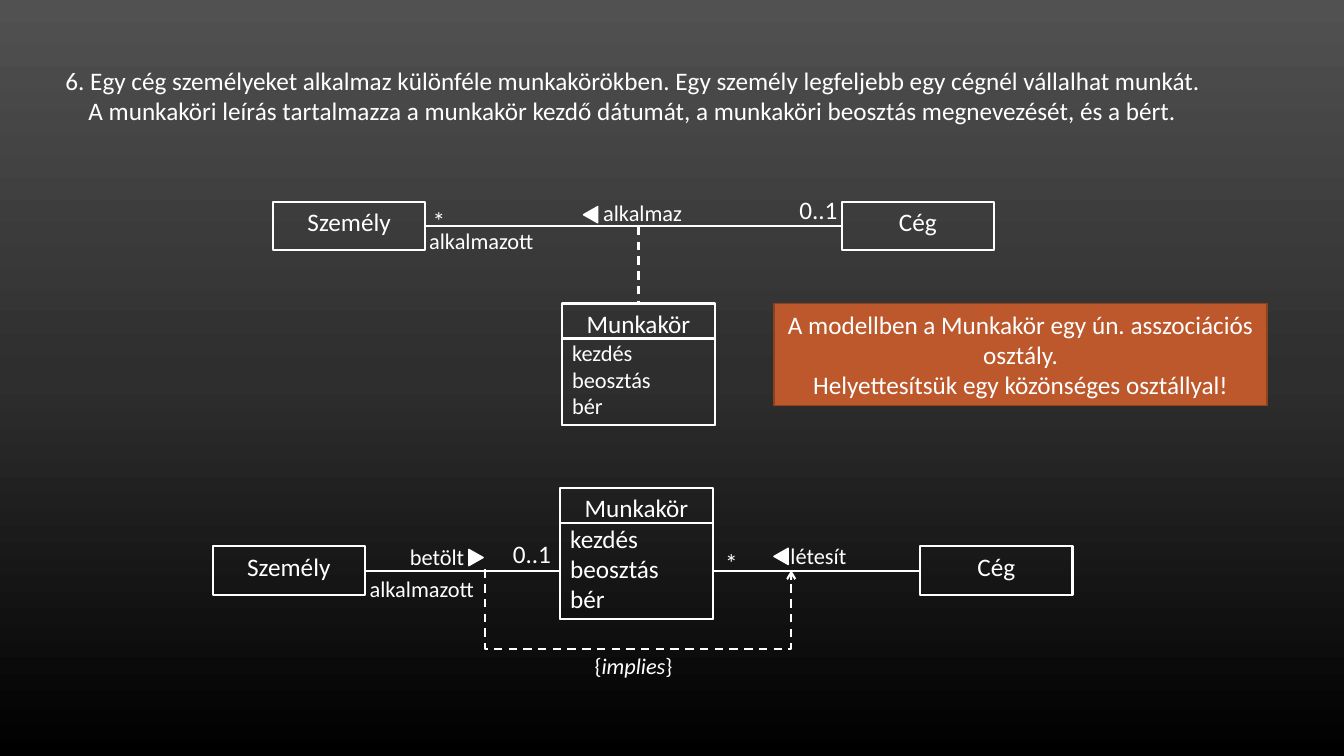
from copy import deepcopy

from lxml import etree
from pptx import Presentation
from pptx.dml.color import RGBColor
from pptx.enum.dml import MSO_LINE
from pptx.enum.shapes import MSO_CONNECTOR, MSO_SHAPE
from pptx.enum.text import MSO_ANCHOR, MSO_AUTO_SIZE, PP_ALIGN
from pptx.oxml.ns import qn
from pptx.util import Cm, Pt

STRAIGHT, ELBOW = MSO_CONNECTOR.STRAIGHT, MSO_CONNECTOR.ELBOW
RECT, WEDGE = MSO_SHAPE.RECTANGLE, MSO_SHAPE.ISOSCELES_TRIANGLE
DASH = MSO_LINE.DASH
LEFT, CENTER = PP_ALIGN.LEFT, PP_ALIGN.CENTER
TOP, MIDDLE = MSO_ANCHOR.TOP, MSO_ANCHOR.MIDDLE
GROW = MSO_AUTO_SIZE.SHAPE_TO_FIT_TEXT
TOP_SIDE, LEFT_SIDE, RIGHT_SIDE = 0, 1, 3

COLORS = {"white": "FFFFFF", "note": "BD582C", "edge": "8C4121",
          "high": "515151", "mid": "2E2E2E", "low": "000000"}
FONT = "Calibri"
WIDE, TALL, HEAD = 3.84, 1.22, 0.88  # class box and its name row, in cm


def color(name):
    return RGBColor.from_string(COLORS[name])


def write(shape, text, size=18, align=CENTER, italic=False, indent=0, join=False):
    """Add text as a new paragraph, or to the last one if join is set."""
    frame = shape.text_frame
    para = frame.paragraphs[-1]
    if para.runs and not join:
        para = frame.add_paragraph()
    para.alignment = align
    if indent:
        para._p.get_or_add_pPr().set("marL", str(Cm(indent)))
    run = para.add_run()
    run.text = text
    font = run.font
    font.name, font.size, font.italic = FONT, Pt(size), italic
    font.color.rgb = color("white")


class Diagram:
    def __init__(self, slide):
        self.slide = slide
        self.shapes = slide.shapes

    def backdrop(self, *names):
        fill = self.slide.background.fill
        fill.gradient()
        fill.gradient_angle = 270
        stops = self.slide.element.find(".//" + qn("a:gsLst"))
        stops.append(deepcopy(stops[-1]))
        for i, (stop, name) in enumerate(zip(fill.gradient_stops, names)):
            stop.color.rgb = color(name)
            stop.position = i / (len(names) - 1)

    def shape(self, kind, x, y, w, h, fill=None, line="white", width=1.5):
        item = self.shapes.add_shape(kind, Cm(x), Cm(y), Cm(w), Cm(h))
        item.shadow.inherit = False
        if fill:
            item.fill.solid()
            item.fill.fore_color.rgb = color(fill)
        else:
            item.fill.background()
        item.line.color.rgb = color(line)
        item.line.width = Pt(width)
        item.text_frame.vertical_anchor = TOP
        return item

    def entity(self, name, x, y):
        box = self.shape(RECT, x, y, WIDE, TALL)
        write(box, name)
        return box

    def job(self, x, y, h, size):
        """Draw the class with attributes; return its outline and lower part."""
        box = self.shape(RECT, x, y, WIDE, h)
        write(box, "Munkakör")
        for field in ("kezdés", "beosztás", "bér"):
            write(box, field, size=size, align=LEFT)
        return box, self.shape(RECT, x, y + HEAD, WIDE, h - HEAD)

    def label(self, text, x, y, w, h=0.94, **style):
        box = self.shapes.add_textbox(Cm(x), Cm(y), Cm(w), Cm(h))
        box.text_frame.word_wrap = False
        box.text_frame.auto_size = GROW
        write(box, text, **style)
        return box

    def wedge(self, x, y, turn):
        item = self.shape(WEDGE, x, y, 0.41, 0.36, fill="white", width=1)
        item.rotation = turn

    def line(self, x1, y1, x2, y2, kind=STRAIGHT, dash=None):
        item = self.shapes.add_connector(kind, Cm(x1), Cm(y1), Cm(x2), Cm(y2))
        item.line.color.rgb = color("white")
        item.line.width = Pt(1.5)
        if dash:
            item.line.dash_style = dash
        etree.SubElement(item.element.spPr, qn("a:effectLst"))
        return item

    def link(self, start, end):
        """Join the right side of one box to the left side of another."""
        item = self.line(0, 0, 1, 1)
        item.begin_connect(start, RIGHT_SIDE)
        item.end_connect(end, LEFT_SIDE)

    def bridge(self, x1, x2, y, drop):
        """Draw a dashed U-shaped arrow that hangs below height y."""
        mid, half, thin = (x1 + x2) / 2, (x2 - x1) / 2, 0.01
        item = self.line(mid + thin, y - half, mid - thin, y + half, ELBOW, DASH)
        props = item.element.spPr
        props.find(qn("a:xfrm")).set("rot", str(270 * 60000))
        ratio = round(drop / (2 * thin) * 100000)
        guides = props.find(qn("a:prstGeom")).get_or_add_avLst()
        etree.SubElement(guides, qn("a:gd"), name="adj1", fmla=f"val {ratio}")
        etree.SubElement(props.find(qn("a:ln")), qn("a:tailEnd"), type="arrow")


def main():
    deck = Presentation()
    deck.slide_width, deck.slide_height = Cm(33.87), Cm(19.05)
    art = Diagram(deck.slides.add_slide(deck.slide_layouts[6]))
    art.backdrop("high", "mid", "low")

    task = art.label("6. Egy cég személyeket alkalmaz különféle munkakörökben. "
                     "Egy személy legfeljebb egy cégnél vállalhat munkát.",
                     1.4, 1.52, 29.59, 1.8, align=LEFT)
    write(task, "A munkaköri leírás tartalmazza a munkakör kezdő dátumát, "
          "a munkaköri beosztás megnevezését, és a bért.", align=LEFT, indent=0.58)

    # Association class
    person = art.entity("Személy", 6.88, 5.08)
    firm = art.entity("Cég", 21.21, 5.08)
    job, _ = art.job(14.17, 7.65, 3.07, 16)
    art.link(person, firm)
    stem = art.line(16.09, 5.72, 16.09, 7.65, dash=DASH)
    stem.end_connect(job, TOP_SIDE)
    art.label("*", 10.64, 5.05, 0.84, 1.02)
    art.wedge(14.68, 5.23, 270)
    art.label("alkalmaz", 14.94, 4.9, 2.51, size=16)
    art.label("alkalmazott", 10.54, 5.59, 3.18, size=16)
    art.label("0..1", 19.89, 4.78, 1.47, 1.02)

    note = art.shape(RECT, 19.51, 7.65, 12.42, 2.57, "note", "edge", 1)
    note.text_frame.word_wrap = True
    note.text_frame.vertical_anchor = MIDDLE
    write(note, "A modellben a Munkakör egy ún. asszociációs osztály.")
    write(note, "Helyettesítsük egy közönséges osztállyal!")

    # Ordinary class
    person = art.entity("Személy", 5.36, 13.77)
    firm = art.entity("Cég", 23.19, 13.77)
    _, fields = art.job(14.12, 12.29, 3.3, 18)
    art.link(person, fields)
    art.link(fields, firm)
    art.label("*", 18.01, 13.67, 0.84, 1.02)
    art.wedge(19.48, 13.84, 270)
    art.label("létesít", 19.66, 13.54, 1.93, size=16)
    art.label("alkalmazott", 9.04, 14.38, 3.18, size=16)
    art.label("0..1", 12.67, 13.44, 1.47, 1.02)
    art.wedge(11.79, 13.87, 90)
    art.label("betölt", 10.06, 13.56, 1.91, size=16)
    art.bridge(12.22, 19.94, 14.36, 2)
    rule = art.label("{", 14.71, 16.31, 2.51, size=16)
    write(rule, "implies", size=16, italic=True, join=True)
    write(rule, "}", size=16, join=True)

    deck.save("out.pptx")


if __name__ == "__main__":
    main()
